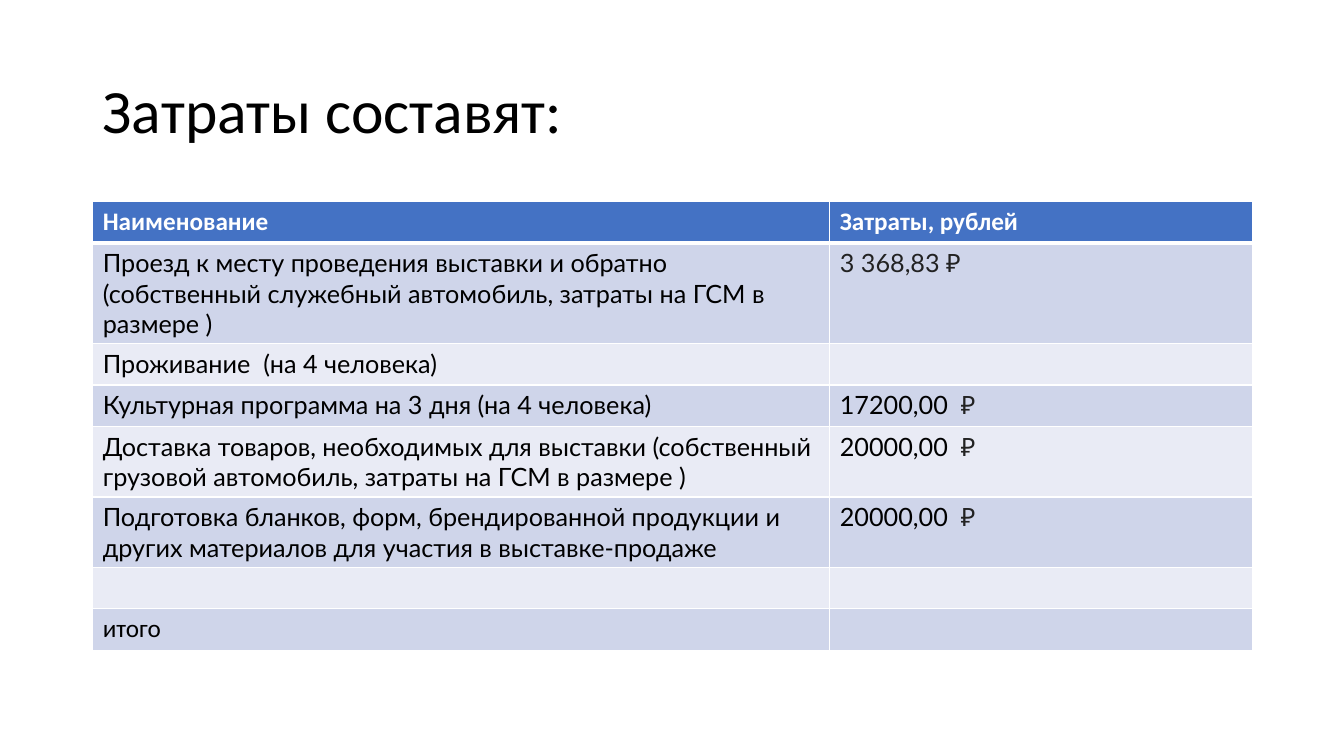
from lxml.etree import SubElement
from pptx import Presentation
from pptx.dml.color import RGBColor as Color
from pptx.enum.text import MSO_ANCHOR as Anchor
from pptx.oxml.ns import qn
from pptx.util import Inches, Pt

COLORS = {
    "black": "000000",
    "ruble": "222222",
    "white": "FFFFFF",
    "header": "4472C4",
    "odd": "CFD5EA",
    "even": "E9EBF5",
}
HEADINGS = ["Наименование", "Затраты, рублей"]
COSTS = [
    ("Проезд к месту проведения выставки и обратно (собственный служебный "
     "автомобиль, затраты на ГСМ в размере )", [("3 368,83 ₽", "ruble")]),
    ("Проживание  (на 4 человека)", []),
    ("Культурная программа на 3 дня (на 4 человека)",
     [("17200,00  ", "black"), ("₽", "ruble")]),
    ("Доставка товаров, необходимых для выставки (собственный грузовой "
     "автомобиль, затраты на ГСМ в размере )",
     [("20000,00  ", "black"), ("₽", "ruble")]),
    ("Подготовка бланков, форм, брендированной продукции и других материалов "
     "для участия в выставке-продаже",
     [("20000,00  ", "black"), ("₽", "ruble")]),
    ("", []),
    ("итого", []),
]


class CostSlide:
    heading_font = "Calibri"
    body_font = "Lato"

    def __init__(self, deck):
        self.page = deck.slides.add_slide(deck.slide_layouts[6])

    def fill_para(self, para, spans, font, size, bold=False):
        para.font.name = font
        para.font.size = Pt(size)
        para.font.bold = bold
        for text, color in spans:
            span = para.add_run()
            span.text = text
            span.font.color.rgb = Color.from_string(COLORS[color])

    def title(self, text, left, top, width, height):
        box = self.page.shapes.add_textbox(
            Inches(left), Inches(top), Inches(width), Inches(height))
        frame = box.text_frame
        frame.word_wrap = True
        frame.vertical_anchor = Anchor.MIDDLE
        para = frame.paragraphs[0]
        para.line_spacing = 0.9
        self.fill_para(para, [(text, "black")], self.heading_font, 44)

    def borders(self, cell, widths):
        properties = cell._tc.get_or_add_tcPr()
        for side, width in zip("LRTB", widths):
            line = SubElement(properties, qn(f"a:ln{side}"), w=str(Pt(width)))
            fill = SubElement(line, qn("a:solidFill"))
            SubElement(fill, qn("a:srgbClr"), val=COLORS["white"])

    def cell(self, cell, spans, font, fill, bold=False, widths=(1, 1, 1, 1)):
        self.borders(cell, widths)
        cell.fill.solid()
        cell.fill.fore_color.rgb = Color.from_string(COLORS[fill])
        self.fill_para(cell.text_frame.paragraphs[0], spans, font, 18, bold)

    def table(self, headings, costs, left, top, column_widths, row_height):
        row_count = len(costs) + 1
        table = self.page.shapes.add_table(
            row_count, len(headings), Inches(left), Inches(top),
            Inches(sum(column_widths)), Inches(row_height * row_count)).table
        for column, width in zip(table.columns, column_widths):
            column.width = Inches(width)
        for index, heading in enumerate(headings):
            self.cell(table.cell(0, index), [(heading, "white")],
                      self.heading_font, "header", True, (1, 1, 1, 3))
        for row, (name, amount) in enumerate(costs, 1):
            fill = "odd" if row % 2 else "even"
            top_width = 3 if row == 1 else 1
            font = self.heading_font if row == len(costs) else self.body_font
            name_spans = [(name, "black")] if name else []
            for index, spans in enumerate((name_spans, amount)):
                self.cell(table.cell(row, index), spans, font, fill,
                          widths=(1, 1, top_width, 1))


def main():
    deck = Presentation()
    deck.slide_width = Inches(13.33)
    deck.slide_height = Inches(7.5)
    slide = CostSlide(deck)
    slide.title("Затраты составят:", 0.92, 0.4, 11.5, 1.45)
    slide.table(HEADINGS, COSTS, 0.92, 2, [7.31, 4.19], 0.41)
    deck.save("out.pptx")


if __name__ == "__main__":
    main()
